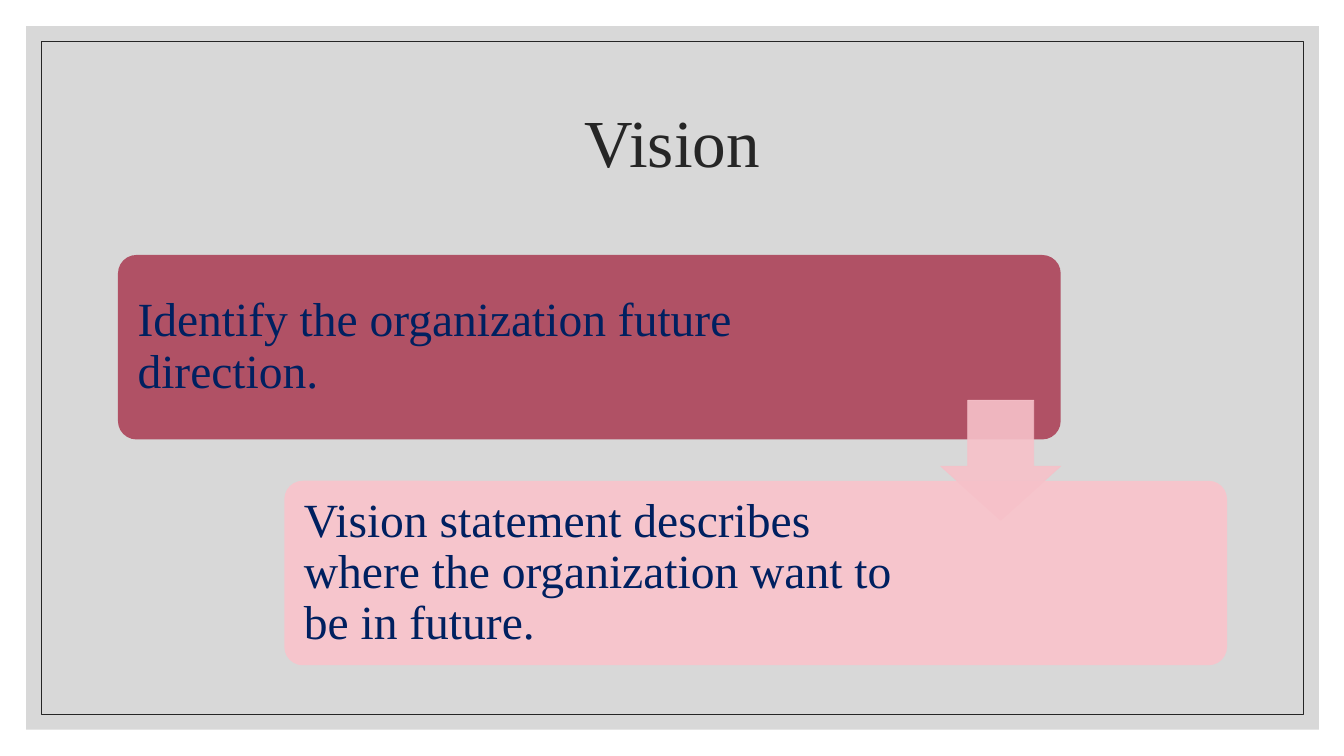
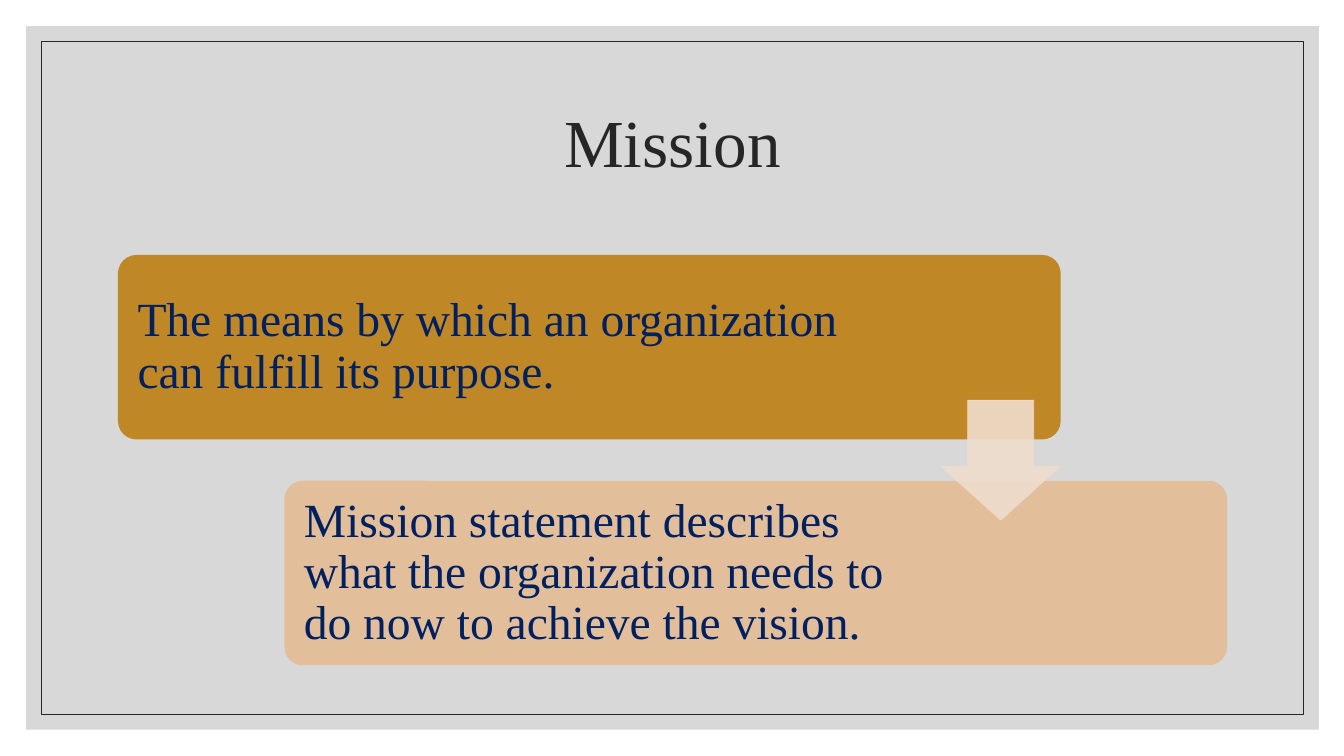
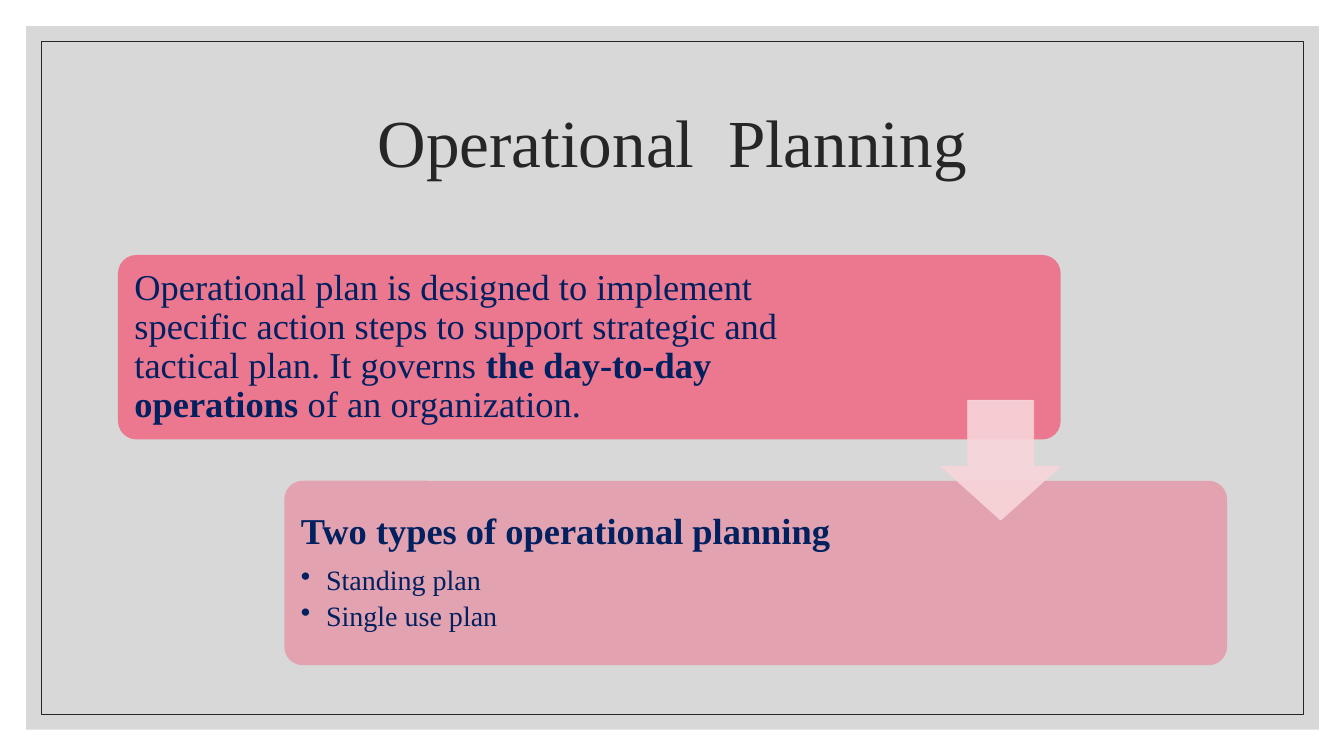
from dataclasses import dataclass

from pptx import Presentation
from pptx import util as u
from pptx.dml import color, fill
from pptx.enum import shapes, text
from pptx.oxml import ns
from lxml import etree

COLORS = {
    "panel": "BFBFBF",
    "ink": "262626",
    "navy": "002060",
    "wine": "B05165",
    "blush": "F6C5CC",
    "blush_arrow": "F6C1C9",
    "ochre": "C08726",
    "sand": "E2BE9A",
    "sand_arrow": "EFDDCD",
    "rose": "EE6E88",
    "rose_arrow": "F8D5DA",
}
FONT = "Times New Roman"
CARD_W, CARD_H = 9.35, 1.83
CARD_CORNER = 0.1
TEXT_PAD = 0.05
ARROW_SIZE = 1.19


@dataclass(frozen=True)
class Run:
    text: str
    bold: bool = False


@dataclass(frozen=True)
class Para:
    runs: tuple[Run, ...]
    size: int = 34
    gap: int = 0
    bullet: bool = False


@dataclass(frozen=True)
class Card:
    paras: tuple[Para, ...]
    color: str
    alpha: int = 100


@dataclass(frozen=True)
class Step:
    title: str
    cards: tuple[Card, Card]
    arrow_color: str
    inset: float = 0.14


@dataclass(frozen=True)
class CardSlot:
    left: float
    top: float
    text_w: float


SLOTS = (CardSlot(1.17, 2.53, 7.45), CardSlot(2.82, 4.77, 6.4))

STEPS = (
    Step(
        "Vision",
        (
            Card((Para((Run("Identify the organization future direction."),)),), "wine"),
            Card((Para((Run("Vision statement describes where the organization want to be in future."),)),), "blush"),
        ),
        "blush_arrow",
    ),
    Step(
        "Mission",
        (
            Card((Para((Run("The means by which an organization can fulfill its purpose."),)),), "ochre"),
            Card((Para((Run("Mission statement describes what the organization needs to do now to achieve the vision."),)),), "sand"),
        ),
        "sand_arrow",
    ),
    Step(
        "Operational  Planning",
        (
            Card(
                (
                    Para(
                        (
                            Run("Operational plan is designed to implement specific action steps to support strategic and tactical plan. It governs "),
                            Run("the day-to-day operations", True),
                            Run(" of an organization."),
                        ),
                        26,
                    ),
                ),
                "rose",
                90,
            ),
            Card(
                (
                    Para((Run("Two types of operational planning", True),), 26, 10),
                    Para((Run("Standing plan"),), 20, 4, True),
                    Para((Run("Single use plan"),), 20, 0, True),
                ),
                "rose",
                50,
            ),
        ),
        "rose_arrow",
        0.11,
    ),
)


def rgb(name: str) -> color.RGBColor:
    return color.RGBColor.from_string(COLORS[name])


def paint(target: fill.FillFormat, name: str, alpha: int = 100) -> None:
    target.solid()
    target.fore_color.rgb = rgb(name)


def set_alpha(sp, alpha: int) -> None:
    for clr in sp._element.spPr.iter(ns.qn("a:srgbClr")):
        etree.SubElement(clr, ns.qn("a:alpha")).set("val", str(alpha * 1000))


def add_block(s, kind, left: float, top: float, width: float, height: float,
              fill_color: str | None = None, line_color: str | None = None, alpha: int = 100):
    sp = s.shapes.add_shape(kind, u.Inches(left), u.Inches(top), u.Inches(width), u.Inches(height))
    sp.shadow.inherit = False
    if fill_color:
        paint(sp.fill, fill_color)
    else:
        sp.fill.background()
    if line_color:
        paint(sp.line.fill, line_color)
        sp.line.width = u.Pt(0.5)
    else:
        sp.line.fill.background()
    if alpha < 100:
        set_alpha(sp, alpha)
    return sp


def add_run(p, run: Run, size: int, name: str) -> None:
    r = p.add_run()
    r.text = run.text
    r.font.name = FONT
    r.font.size = u.Pt(size)
    r.font.bold = run.bold
    r.font.color.rgb = rgb(name)


def add_bullet(p) -> None:
    p.level = 1
    pPr = p._p.get_or_add_pPr()
    pPr.set("marL", str(u.Inches(0.25)))
    pPr.set("indent", str(-u.Inches(0.25)))
    etree.SubElement(pPr, ns.qn("a:buChar")).set("char", "•")


def write(tf, paras: tuple[Para, ...], name: str, align) -> None:
    tf.word_wrap = True
    tf.vertical_anchor = text.MSO_ANCHOR.MIDDLE
    for i, para in enumerate(paras):
        p = tf.paragraphs[0] if i == 0 else tf.add_paragraph()
        p.alignment = align
        p.line_spacing = 0.9
        p.space_after = u.Pt(para.gap)
        if para.bullet:
            add_bullet(p)
        for run in para.runs:
            add_run(p, run, para.size, name)


def add_frame(s, title: str) -> None:
    rect = shapes.MSO_SHAPE.RECTANGLE
    add_block(s, rect, 0.26, 0.26, 12.82, 6.98, fill_color="panel", alpha=60)
    add_block(s, rect, 0.41, 0.41, 12.52, 6.68, line_color="ink")
    box = s.shapes.add_textbox(u.Inches(1.17), u.Inches(0.7), u.Inches(11), u.Inches(1.5))
    write(box.text_frame, (Para((Run(title),), 48),), "ink", text.PP_ALIGN.CENTER)


def add_card(s, card: Card, slot: CardSlot, inset: float) -> None:
    sp = add_block(s, shapes.MSO_SHAPE.ROUNDED_RECTANGLE, slot.left, slot.top, CARD_W, CARD_H,
                   fill_color=card.color, alpha=card.alpha)
    sp.adjustments[0] = CARD_CORNER
    tf = sp.text_frame
    tf.margin_left = tf.margin_top = tf.margin_bottom = u.Inches(inset)
    tf.margin_right = u.Inches(CARD_W - 2 * TEXT_PAD - slot.text_w + inset)
    write(tf, card.paras, "navy", text.PP_ALIGN.LEFT)


def add_arrow(s, name: str) -> None:
    first, second = SLOTS
    left = first.left + CARD_W - ARROW_SIZE
    middle = (first.top + CARD_H + second.top) / 2
    sp = add_block(s, shapes.MSO_SHAPE.DOWN_ARROW, left, middle - ARROW_SIZE / 2,
                   ARROW_SIZE, ARROW_SIZE, fill_color=name, line_color=name, alpha=90)
    sp.adjustments[0] = 0.55
    sp.adjustments[1] = 0.45


def add_step(prs, step: Step) -> None:
    s = prs.slides.add_slide(prs.slide_layouts[6])
    add_frame(s, step.title)
    for card, slot in zip(step.cards, SLOTS):
        add_card(s, card, slot, step.inset)
    add_arrow(s, step.arrow_color)


def main() -> None:
    prs = Presentation()
    prs.slide_width = u.Inches(13.33)
    prs.slide_height = u.Inches(7.5)
    for step in STEPS:
        add_step(prs, step)
    prs.save("out.pptx")


if __name__ == "__main__":
    main()
